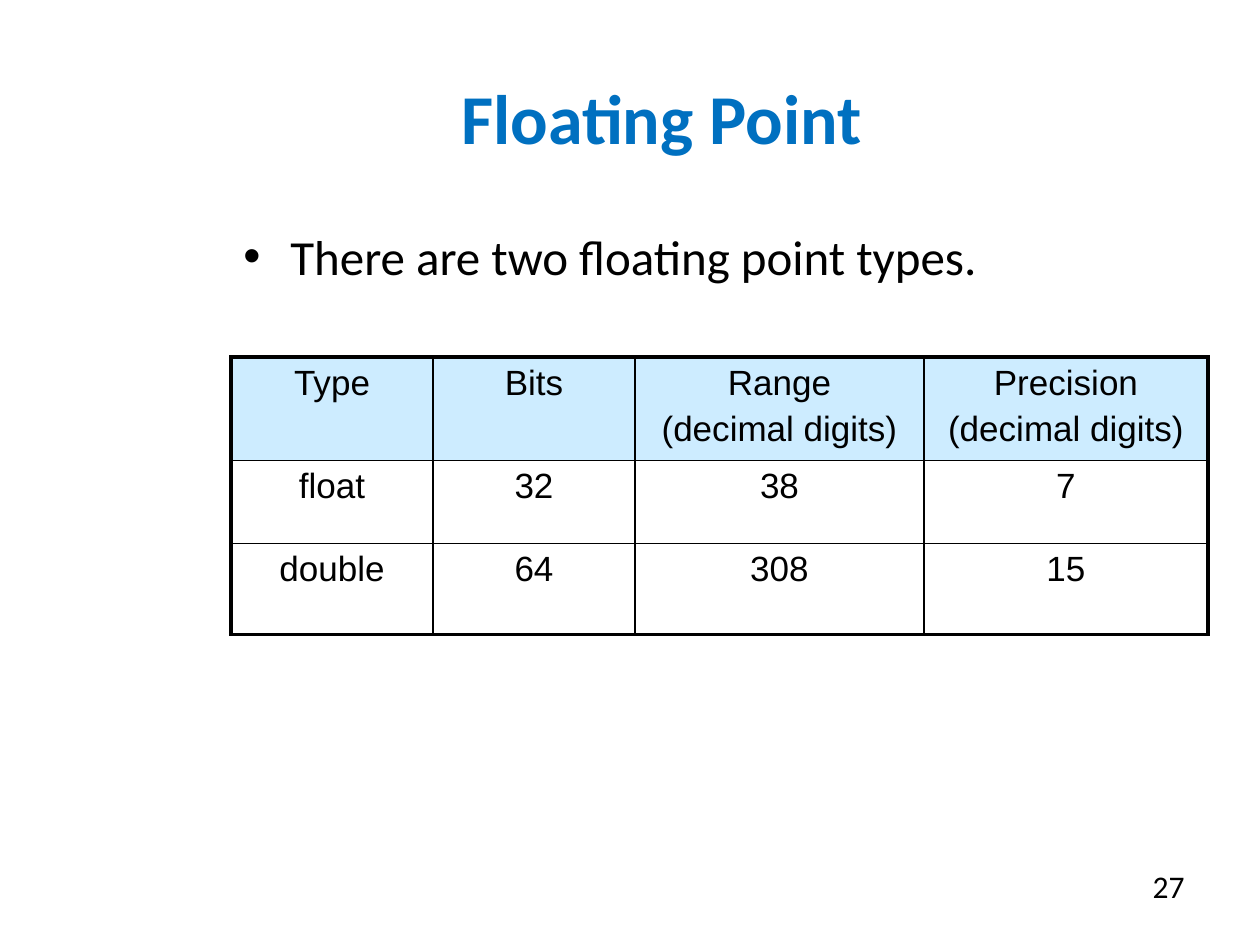
from lxml import etree
from pptx import Presentation
from pptx.dml.color import RGBColor
from pptx.enum.text import MSO_ANCHOR, PP_ALIGN
from pptx.oxml.ns import qn
from pptx.util import Pt

LEFT, MID, RIGHT = PP_ALIGN.LEFT, PP_ALIGN.CENTER, PP_ALIGN.RIGHT
TOP, CENTER = MSO_ANCHOR.TOP, MSO_ANCHOR.MIDDLE
PX = 914400 / 126
COLORS = {"title": "0070C0", "text": "000000", "head": "CDECFF", "line": "000000"}


def px(n):
    return round(n * PX)


def write(frame, text, size, font="Calibri", color="text", bold=False,
          align=LEFT, anchor=TOP, bullet=False):
    """Fill a text frame, one paragraph for each line of text."""
    frame.word_wrap = True
    frame.vertical_anchor = anchor
    for i, line in enumerate(text.split("\n")):
        para = frame.add_paragraph() if i else frame.paragraphs[0]
        para.alignment = align
        if i:
            para.space_before = Pt(size * 0.2)
        if bullet:
            props = para._p.get_or_add_pPr()
            props.set("marL", str(px(47)))
            props.set("indent", str(px(-47)))
            etree.SubElement(props, qn("a:buFont"), typeface="Arial")
            etree.SubElement(props, qn("a:buChar"), char="•")
        run = para.add_run()
        run.text = line
        run.font.name, run.font.size, run.font.bold = font, Pt(size), bold
        run.font.color.rgb = RGBColor.from_string(COLORS[color])


prs = Presentation()
prs.slide_width, prs.slide_height = px(1260), px(945)
slide = prs.slides.add_slide(prs.slide_layouts[6])

boxes = [
    ((231, 38, 861, 158), "Floating Point", 40,
     dict(color="title", bold=True, align=MID, anchor=CENTER)),
    ((231, 220, 966, 624), "There are two floating point types.", 28,
     dict(bullet=True)),
    ((903, 861, 294, 66), "27", 18, dict(align=RIGHT)),
]
for place, text, size, style in boxes:
    box = slide.shapes.add_textbox(*map(px, place))
    write(box.text_frame, text, size, **style)

rows = [
    ["Type", "Bits", "Range\n(decimal digits)", "Precision\n(decimal digits)"],
    ["float", "32", "38", "7"],
    ["double", "64", "308", "15"],
]
widths = [202, 202, 289, 284]
heights = [98, 83, 91]
table = slide.shapes.add_table(
    len(rows), len(widths), px(231), px(357), px(sum(widths)), px(sum(heights))).table
for col, width in zip(table.columns, widths):
    col.width = px(width)
for row, height in zip(table.rows, heights):
    row.height = px(height)

for r, row in enumerate(rows):
    for c, text in enumerate(row):
        cell = table.cell(r, c)
        write(cell.text_frame, text, 20, font="Arial", align=MID)
        if r == 0:
            cell.fill.solid()
            cell.fill.fore_color.rgb = RGBColor.from_string(COLORS["head"])
        else:
            cell.fill.background()
        outer = {"L": c == 0, "R": c == len(row) - 1,
                 "T": r == 0, "B": r == len(rows) - 1}
        props = cell._tc.get_or_add_tcPr()
        for i, (side, edge) in enumerate(outer.items()):
            line = etree.Element(qn("a:ln" + side), w=str(Pt(2.25 if edge else 1)))
            fill = etree.SubElement(line, qn("a:solidFill"))
            etree.SubElement(fill, qn("a:srgbClr"), val=COLORS["line"])
            props.insert(i, line)

prs.save("out.pptx")
